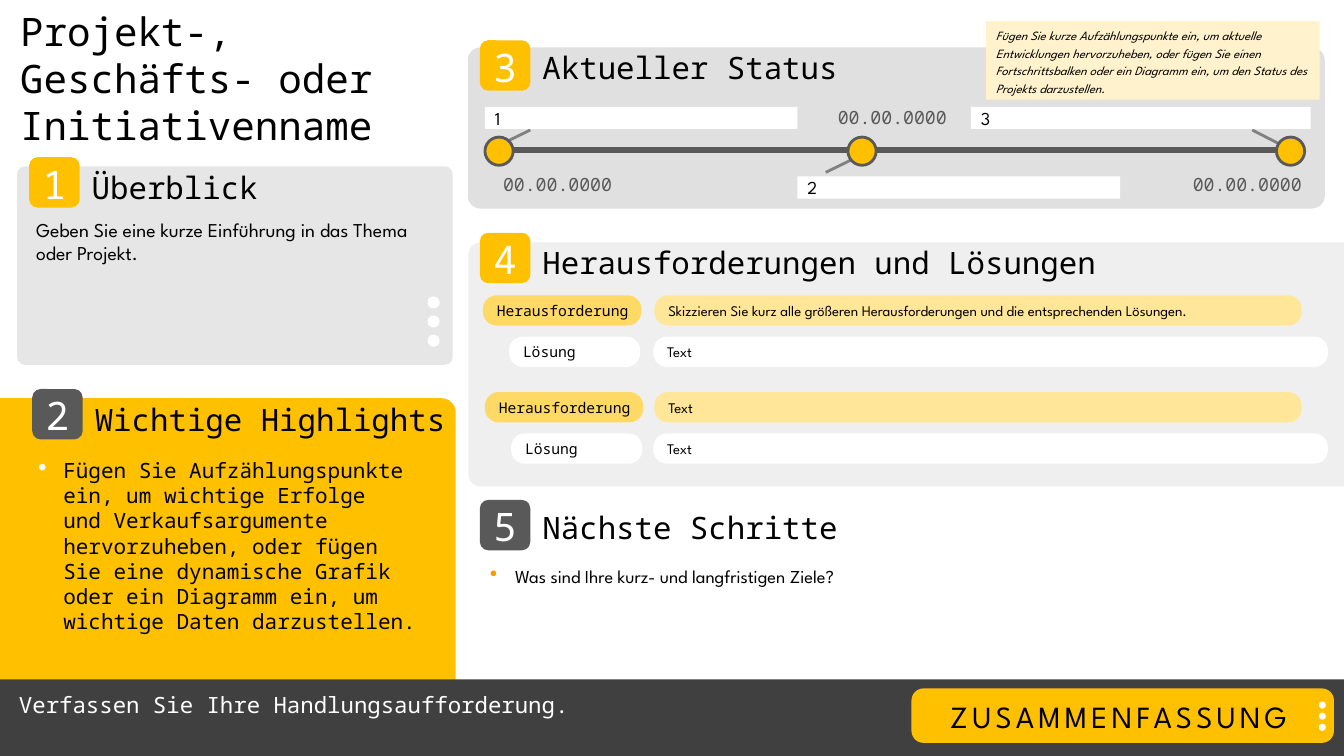
from copy import deepcopy

from lxml import etree
from pptx import Presentation
from pptx.dml.color import RGBColor
from pptx.enum.shapes import MSO_CONNECTOR, MSO_SHAPE
from pptx.enum.text import MSO_ANCHOR, PP_ALIGN
from pptx.oxml.ns import qn
from pptx.util import Emu, Pt

RECT, ROUND, OVAL = MSO_SHAPE.RECTANGLE, MSO_SHAPE.ROUNDED_RECTANGLE, MSO_SHAPE.OVAL
ONE, TWO = MSO_SHAPE.ROUND_1_RECTANGLE, MSO_SHAPE.ROUND_2_SAME_RECTANGLE
LINE = MSO_CONNECTOR.STRAIGHT
TOP, MID = MSO_ANCHOR.TOP, MSO_ANCHOR.MIDDLE
LEFT, CENTER = PP_ALIGN.LEFT, PP_ALIGN.CENTER

BLACK = RGBColor(0, 0, 0)
WHITE = RGBColor(0xFF, 0xFF, 0xFF)
GOLD = RGBColor(0xFF, 0xC0, 0x00)
AMBER = RGBColor(0xFF, 0xD9, 0x66)
SAND = RGBColor(0xFF, 0xE6, 0x99)
CREAM = RGBColor(0xFF, 0xF2, 0xCC)
ORANGE = RGBColor(0xF5, 0x9C, 0x00)
PALE = RGBColor(0xEF, 0xEF, 0xEF)
LIGHT = RGBColor(0xE7, 0xE6, 0xE6)
SILVER = RGBColor(0xE0, 0xE0, 0xE0)
GRAY = RGBColor(0x80, 0x80, 0x80)
SLATE = RGBColor(0x59, 0x59, 0x59)
DARK = RGBColor(0x40, 0x40, 0x40)

SANS, MONO = "League Spartan", "Noto Sans Mono"
PX = 9144  # 100 px to the inch

TITLE = "Projekt-, Geschäfts- oder Initiativenname"
INTRO = "Geben Sie eine kurze Einführung in das Thema oder Projekt."
HINT = ("Fügen Sie Aufzählungspunkte ein, um wichtige Erfolge \v"
        "und Verkaufsargumente hervorzuheben, oder fügen Sie eine dynamische "
        "Grafik oder ein Diagramm ein, um wichtige Daten darzustellen.")
NOTE = ("Fügen Sie kurze Aufzählungspunkte ein, um aktuelle Entwicklungen "
        "hervorzuheben, oder fügen Sie einen Fortschrittsbalken oder ein "
        "Diagramm ein, um den Status des Projekts darzustellen.")
GOALS = "Was sind Ihre kurz- und langfristigen Ziele?"
ACTION = "Verfassen Sie Ihre Handlungsaufforderung."
LABEL = "ZUSAMMENFASSUNG"
DATE = "00.00.0000"

# kind, box, fill, corner
PANELS = [
    (ROUND, (464, 47, 850, 160), SILVER, 0.08),
    (ONE, (0, 395, 452, 355), GOLD, 0.04),
    (ROUND, (17, 165, 432, 197), LIGHT, 0.04),
    (RECT, (0, 674, 1333, 76), DARK, None),
]
# title, badge left and top, badge fill, title top and width
HEADS = [
    ("Überblick", 29, 156, GOLD, 168, 226),
    ("Wichtige Highlights", 32, 386, SLATE, 398, 358),
    ("Aktueller Status", 476, 40, GOLD, 49, 411),
    ("Herausforderungen und Lösungen", 476, 231, GOLD, 242, 573),
    ("Nächste Schritte", 476, 496, SLATE, 505, 321),
]
# dot left, date left and top, text box, pointer
STEPS = [
    (481, (476, 167), (481, 106, 310, 22), (487, 148, 526, 129)),
    (841, (808, 101), (791, 175, 320, 22), (819, 171, 858, 152)),
    (1266, (1160, 167), (963, 106, 337, 22), (1281, 149, 1242, 129)),
]
# left, top, challenge, solution
PAIRS = [
    (479, 293, "Skizzieren Sie kurz alle größeren Herausforderungen "
               "und die entsprechenden Lösungen.", "Text"),
    (481, 389, "Text", "Text"),
]

deck = Presentation()
deck.slide_width, deck.slide_height = Emu(1333 * PX), Emu(750 * PX)
slide = deck.slides.add_slide(deck.slide_layouts[6])
shapes = slide.shapes


def scale(box):
    return [Emu(n * PX) for n in box]


def assign(item, values):
    for name, value in values.items():
        setattr(item, name, value)


def draw(kind, box, fill, corner=None, edge=None):
    shape = shapes.add_shape(kind, *scale(box))
    shape.shadow.inherit = False
    shape.fill.solid()
    shape.fill.fore_color.rgb = fill
    if corner is not None:
        shape.adjustments[0] = corner
    if edge:
        shape.line.color.rgb = edge
        shape.line.width = Pt(2)
    else:
        shape.line.fill.background()
    return shape


def link(ends, color, width):
    line = shapes.add_connector(LINE, *scale(ends))
    line.line.color.rgb = color
    line.line.width = Pt(width)
    etree.SubElement(line._element.spPr, qn("a:effectLst"))


def dot(para, color):
    """Give the paragraph a hanging bullet."""
    props = para._p.get_or_add_pPr()
    props.set("marL", str(25 * PX))
    props.set("indent", str(-25 * PX))
    tint = etree.SubElement(props, qn("a:buClr"))
    etree.SubElement(tint, qn("a:srgbClr"), val=str(color))
    etree.SubElement(props, qn("a:buSzPct"), val="120000")
    etree.SubElement(props, qn("a:buChar"), char="•")


def write(shape, text, size, face, color=BLACK, pad=(10, 5, 10, 5), anchor=TOP,
          align=LEFT, gap=None, bullet=None, italic=None, leading=None):
    frame = shape.text_frame
    left, top, right, bottom = scale(pad)
    assign(frame, {"word_wrap": True, "vertical_anchor": anchor,
                   "margin_left": left, "margin_top": top,
                   "margin_right": right, "margin_bottom": bottom})
    para = frame.paragraphs[0]
    para.text = text
    assign(para, {"alignment": align, "line_spacing": leading})
    if bullet:
        para.space_after = Pt(6)
        dot(para, bullet)
    for run in para.runs:
        assign(run.font, {"size": Pt(size), "name": face, "italic": italic})
        run.font.color.rgb = color
        if gap:
            run._r.get_or_add_rPr().set("spc", str(gap * 100))
    for stop in para._p.findall(qn("a:br")):
        stop.append(deepcopy(para.runs[0]._r.rPr))


def label(box, *args, **style):
    write(shapes.add_textbox(*scale(box)), *args, **style)


def dots(left, top, size, step):
    for i in range(3):
        draw(OVAL, (left, top + i * step, size, size), WHITE)


BARE = {"pad": (0, 0, 0, 0), "anchor": MID}
FIELD = {"pad": (10, 0, 10, 0), "anchor": MID}
PILL = {"pad": (10, 0, 0, 0), "anchor": MID}

draw(TWO, (778, -73, 242, 869), PALE, 0.05).rotation = 270
for panel in PANELS:
    draw(*panel)

for num, (title, left, top, fill, line, width) in enumerate(HEADS, 1):
    label((left + 62, line, width, 36), title, 22, MONO, **BARE)
    draw(ROUND, (left, top, 50, 50), fill)
    label((left, top + 10, 50, 32), str(num), 28, MONO, WHITE,
          align=CENTER, gap=-3, **BARE)

label((20, 7, 404, 126), TITLE, 28, MONO, pad=(0, 0, 0, 0))
label((26, 211, 389, 57), INTRO, 14, SANS)
dots(424, 294, 12, 19)
label((28, 449, 396, 187), HINT, 15, MONO, bullet=WHITE)
label((476, 556, 845, 32), GOALS, 13, SANS, bullet=ORANGE)

for step in STEPS:
    link(step[3], GRAY, 2)
link((494, 149, 1290, 149), SLATE, 4)
for num, (left, date, box, _) in enumerate(STEPS, 1):
    draw(OVAL, (left, 136, 28, 28), GOLD, edge=SLATE)
    label((*date, 154, 32), DATE, 13, MONO, SLATE, align=CENTER)
    write(draw(RECT, box, WHITE), str(num), 13, SANS, **FIELD)
write(draw(RECT, (978, 21, 331, 78), CREAM), NOTE, 9, SANS,
      italic=True, leading=1.15)

for left, top, issue, answer in PAIRS:
    low = top + 41
    for box, fill, text, face in [
        ((left, top, 157, 30), AMBER, "Herausforderung", MONO),
        ((left + 26, low, 130, 30), WHITE, "Lösung", MONO),
        ((649, top, 642, 30), SAND, issue, SANS),
        ((648, low, 669, 30), WHITE, answer, SANS),
    ]:
        write(draw(ROUND, box, fill, 0.45), text, 10.5, face, **PILL)

label((9, 681, 836, 37), ACTION, 16, MONO, WHITE)
draw(ROUND, (904, 683, 419, 54), GOLD, 0.22)
label((904, 687, 411, 47), LABEL, 22, SANS, align=CENTER, gap=3)
dots(1308, 696, 7, 11)

deck.save("out.pptx")
